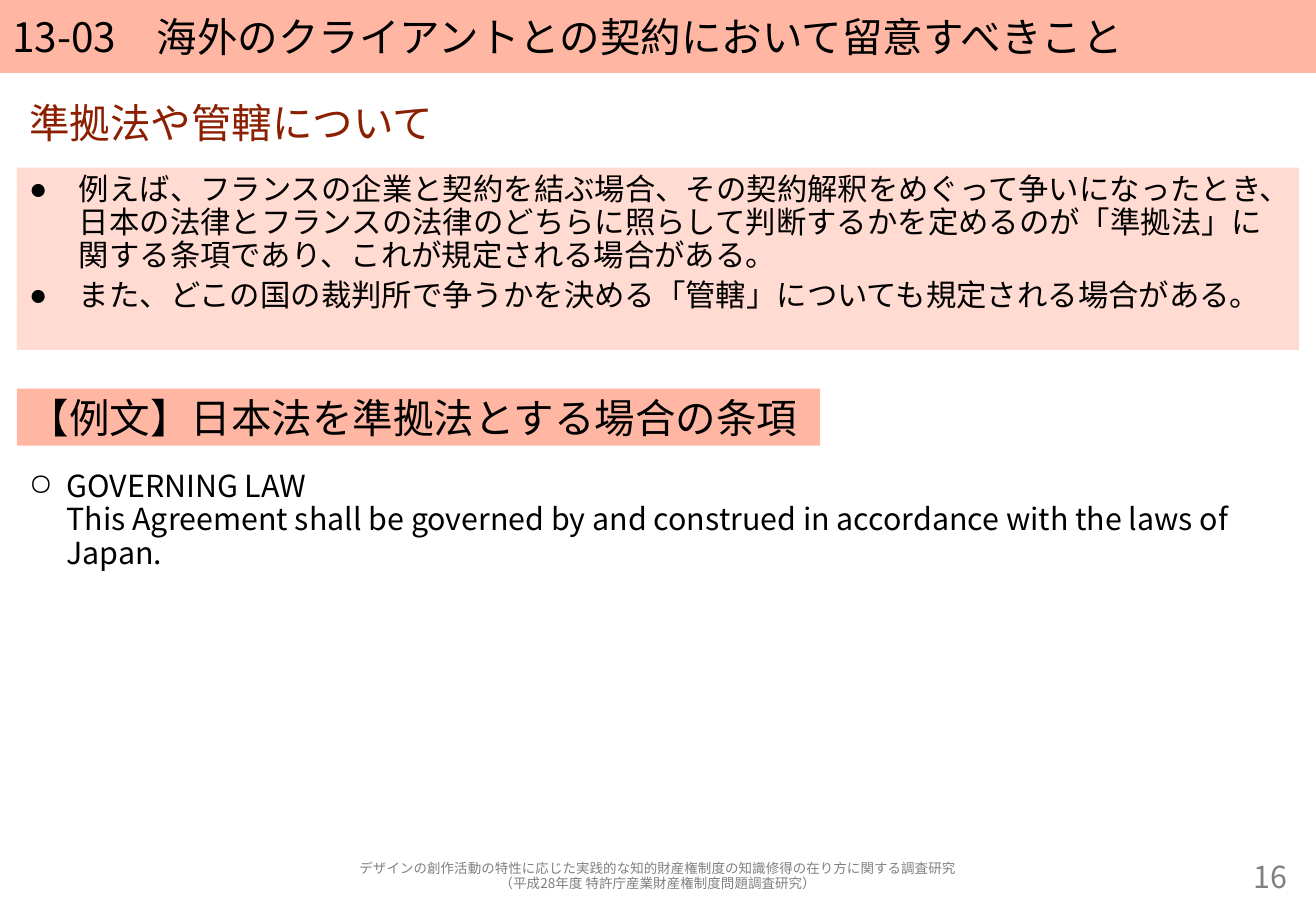
from lxml import etree
from pptx import Presentation
from pptx.dml.color import RGBColor
from pptx.enum.shapes import MSO_SHAPE
from pptx.enum.text import MSO_ANCHOR, MSO_AUTO_SIZE, PP_ALIGN
from pptx.oxml.ns import qn
from pptx.util import Emu, Inches, Pt

RECTANGLE = MSO_SHAPE.RECTANGLE
TOP, MIDDLE = MSO_ANCHOR.TOP, MSO_ANCHOR.MIDDLE
LEFT, CENTER, RIGHT = PP_ALIGN.LEFT, PP_ALIGN.CENTER, PP_ALIGN.RIGHT
NO_AUTOFIT = MSO_AUTO_SIZE.NONE

SLIDE_WIDTH, SLIDE_HEIGHT = Inches(10.83), Inches(7.5)
MARGIN = 1.29
CONTENT_WIDTH = 100 - 2 * MARGIN
HEADING_HEIGHT = 6.27
FOOTER_TOP, FOOTER_HEIGHT = 94.13, 4.13
NUMBER_WIDTH = 12.37
TWO_CONTENT_LAYOUT = 3

FONT = "Noto Sans CJK JP"
BLACK, GRAY, BROWN = "000000", "808080", "8C1F00"
SALMON, PALE_SALMON = "FFB7A3", "FFDBD1"
HEADING_SIZE, TEXT_SIZE, CREDIT_SIZE = 24, 18, 8
TIGHT = 0.91


def rgb(color):
    return RGBColor.from_string(color)


def box(left, top, width, height):
    return [Emu(round(share * length / 100)) for share, length in (
        (left, SLIDE_WIDTH), (top, SLIDE_HEIGHT),
        (width, SLIDE_WIDTH), (height, SLIDE_HEIGHT))]


def place(shape, left, top, width, height):
    shape.left, shape.top, shape.width, shape.height = box(left, top, width, height)


def fill(shape, color):
    shape.fill.solid()
    shape.fill.fore_color.rgb = rgb(color)


def format_font(font, size, color):
    font.size = Pt(size)
    font.name = FONT
    font.color.rgb = rgb(color)
    etree.SubElement(font._element, qn("a:ea"), typeface=FONT)


def set_bullet(paragraph, character, indent):
    properties = paragraph._p.get_or_add_pPr()
    properties.set("marL", str(Inches(indent)))
    properties.set("indent", str(-Inches(indent)))
    if character:
        bullet = etree.SubElement(properties, qn("a:buChar"), char=character)
    else:
        bullet = etree.SubElement(properties, qn("a:buNone"))
    return bullet


def write(shape, texts, size=HEADING_SIZE, color=BLACK, anchor=MIDDLE, alignment=LEFT,
          spacing=1.0, gap=0, bullet=None, indent=0):
    frame = shape.text_frame
    frame.word_wrap = True
    frame.auto_size = NO_AUTOFIT
    frame.vertical_anchor = anchor
    for index, text in enumerate(texts):
        paragraph = frame.add_paragraph() if index else frame.paragraphs[0]
        paragraph.text = text
        paragraph.alignment = alignment
        paragraph.line_spacing = spacing
        paragraph.space_before = Pt(gap if index else 0)
        set_bullet(paragraph, bullet, indent)
        for font in (paragraph.font, *(run.font for run in paragraph.runs)):
            format_font(font, size, color)


def add_text(slide, area, texts, **style):
    write(slide.shapes.add_textbox(*box(*area)), texts, **style)


def add_banner(slide, area, text, color):
    banner = slide.shapes.add_shape(RECTANGLE, *box(*area))
    banner.shadow.inherit = False
    banner.line.fill.background()
    fill(banner, color)
    write(banner, [text])


def main():
    presentation = Presentation()
    presentation.slide_width, presentation.slide_height = SLIDE_WIDTH, SLIDE_HEIGHT
    slide = presentation.slides.add_slide(presentation.slide_layouts[TWO_CONTENT_LAYOUT])
    title, explanation, heading = slide.placeholders

    place(title, 0, 0, 100, 8)
    fill(title, SALMON)
    write(title, ["13-03　海外のクライアントとの契約において留意すべきこと"])

    place(explanation, MARGIN, 18.4, CONTENT_WIDTH, 20)
    fill(explanation, PALE_SALMON)
    write(explanation, [
        "例えば、フランスの企業と契約を結ぶ場合、その契約解釈をめぐって争いになったとき、"
        "日本の法律とフランスの法律のどちらに照らして判断するかを定めるのが「準拠法」に"
        "関する条項であり、これが規定される場合がある。",
        "また、どこの国の裁判所で争うかを決める「管轄」についても規定される場合がある。",
    ], size=TEXT_SIZE, anchor=TOP, spacing=TIGHT, gap=4, bullet="●", indent=0.41)

    place(heading, MARGIN, 10.13, CONTENT_WIDTH, HEADING_HEIGHT)
    write(heading, ["準拠法や管轄について"], color=BROWN, anchor=TOP)

    add_banner(slide, (MARGIN, 42.67, 61.03, HEADING_HEIGHT),
               "【例文】日本法を準拠法とする場合の条項", SALMON)
    add_text(slide, (MARGIN, 51.07, CONTENT_WIDTH, 40.93), [
        "GOVERNING LAW\nThis Agreement shall be governed by and construed "
        "in accordance with the laws of Japan.",
    ], size=TEXT_SIZE, anchor=TOP, spacing=TIGHT, bullet="○", indent=0.31)

    add_text(slide, (MARGIN, FOOTER_TOP, CONTENT_WIDTH, FOOTER_HEIGHT), [
        "デザインの創作活動の特性に応じた実践的な知的財産権制度の知識修得の在り方に関する調査研究",
        "（平成28年度 特許庁産業財産権制度問題調査研究）",
    ], size=CREDIT_SIZE, color=GRAY, alignment=CENTER, spacing=TIGHT)
    add_text(slide, (100 - MARGIN - NUMBER_WIDTH, FOOTER_TOP, NUMBER_WIDTH, FOOTER_HEIGHT),
             ["16"], size=TEXT_SIZE, color=GRAY, alignment=RIGHT)

    presentation.save("out.pptx")


if __name__ == "__main__":
    main()
